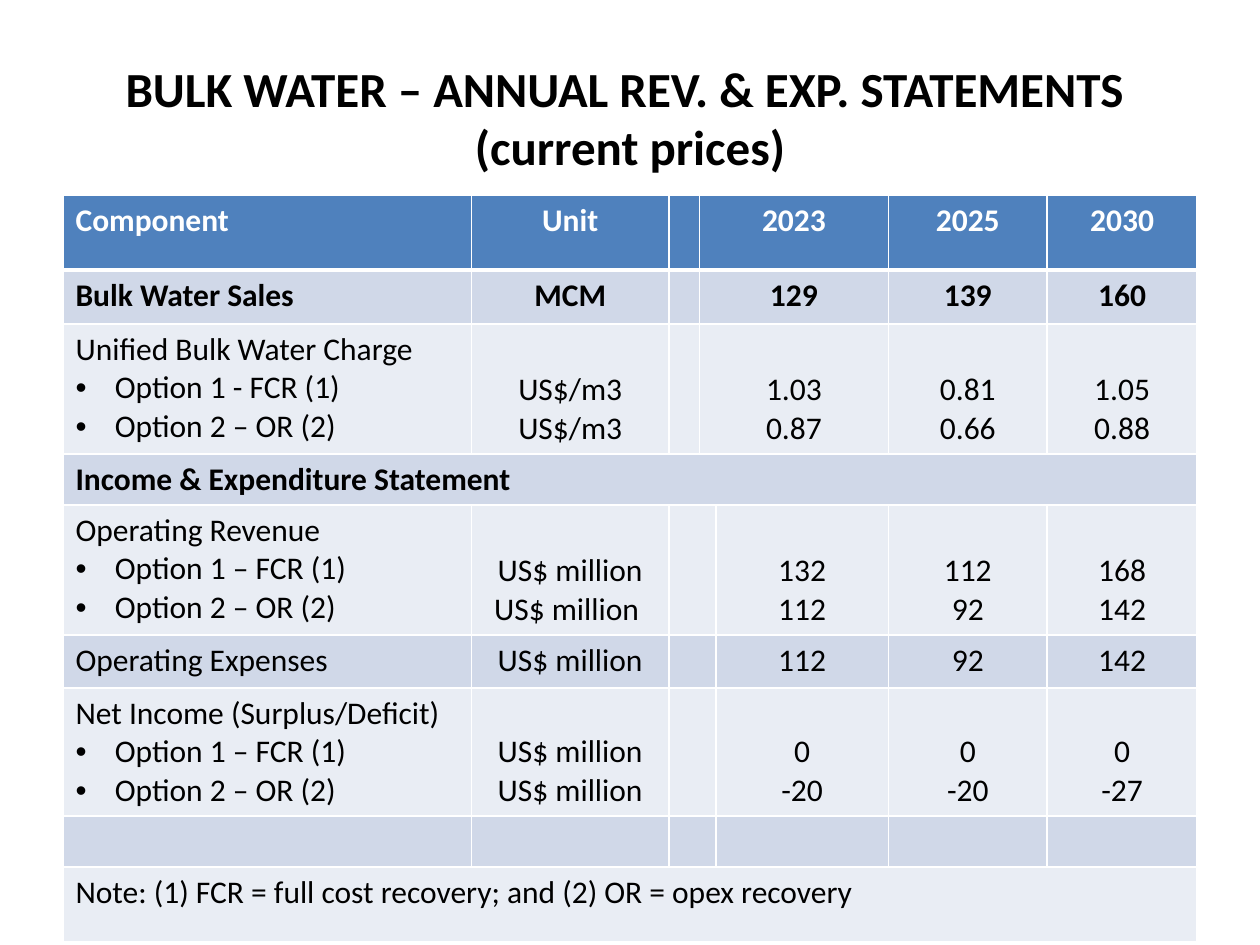
from copy import deepcopy
from lxml import etree
from pptx import Presentation
from pptx import util as u
from pptx.dml.color import RGBColor
from pptx.enum import text
from pptx.oxml.ns import qn

BLACK = RGBColor(0x00, 0x00, 0x00)
WHITE = RGBColor(0xFF, 0xFF, 0xFF)
HEADER_BLUE = RGBColor(0x4F, 0x81, 0xBD)
BAND_DARK = RGBColor(0xD0, 0xD8, 0xE8)
BAND_LIGHT = RGBColor(0xE9, 0xED, 0xF4)


def style_run(run, size, color, bold):
    run.font.name = "Calibri"
    run.font.size = u.Pt(size)
    run.font.color.rgb = color
    run.font.bold = bold


def add_borders(cell, bottom_width):
    props = cell._tc.get_or_add_tcPr()
    widths = {"lnL": 1, "lnR": 1, "lnT": 1, "lnB": bottom_width}
    for position, (side, width) in enumerate(widths.items()):
        line = etree.Element(qn("a:" + side), w=str(u.Pt(width)))
        fill = etree.SubElement(line, qn("a:solidFill"))
        etree.SubElement(fill, qn("a:srgbClr"), val=str(WHITE))
        props.insert(position, line)


prs = Presentation()
prs.slide_width, prs.slide_height = u.Cm(25.4), u.Cm(19.05)
slide = prs.slides.add_slide(prs.slide_layouts[5])

heading = slide.shapes.title
heading.left, heading.top = u.Cm(1.27), u.Cm(0.74)
heading.width, heading.height = u.Cm(22.86), u.Cm(3.23)
heading.text_frame.text = "BULK WATER – ANNUAL REV. & EXP. STATEMENTS \v(current prices)"
heading.text_frame.vertical_anchor = text.MSO_ANCHOR.MIDDLE
heading_line = heading.text_frame.paragraphs[0]
heading_line.alignment = text.PP_ALIGN.CENTER
for run in heading_line.runs:
    style_run(run, 28, BLACK, True)
for line_break in heading_line._p.findall(qn("a:br")):
    line_break.append(deepcopy(heading_line.runs[0]._r.rPr))

options = "\nOption 1 – FCR (1)\nOption 2 – OR (2)"
million = "US$ million"
statement = [
    (1.5, ["Component", "Unit", "2023", "2025", "2030"]),
    (1.09, ["Bulk Water Sales", "MCM", "129", "139", "160"]),
    (2.62, ["Unified Bulk Water Charge\nOption 1 - FCR (1)\nOption 2 – OR (2)",
            "US$/m3\nUS$/m3", "1.03\n0.87", "0.81\n0.66", "1.05\n0.88"]),
    (0.99, ["Income & Expenditure Statement"]),
    (2.62, ["Operating Revenue" + options, f"{million}\n{million} ",
            "132\n112", "112\n92", "168\n142"]),
    (1.07, ["Operating Expenses", million, "112", "92", "142"]),
    (2.57, ["Net Income (Surplus/Deficit)" + options, f"{million}\n{million}",
            "0\n-20", "0\n-20", "0\n-27"]),
    (1.02, ["", "", "", "", ""]),
    (1.5, ["Note: (1) FCR = full cost recovery; and (2) OR = opex recovery"]),
]
column_widths = [8.23, 3.99, 0.61, 0.33, 3.48, 3.2, 3.02]
bold_rows = {0, 1, 3}
first_income_row = 4

table = slide.shapes.add_table(
    len(statement), len(column_widths), u.Cm(1.27), u.Cm(3.94),
    u.Cm(sum(column_widths)), u.Cm(sum(height for height, _ in statement))).table
for column, width in zip(table.columns, column_widths):
    column.width = u.Cm(width)

for r, (height, entries) in enumerate(statement):
    table.rows[r].height = u.Cm(height)
    for cell in table.rows[r].cells:
        cell.fill.solid()
        cell.fill.fore_color.rgb = HEADER_BLUE if r == 0 else BAND_DARK if r % 2 else BAND_LIGHT
        add_borders(cell, 3 if r == 0 else 1)

    if len(entries) == 1:
        table.cell(r, 0).merge(table.cell(r, 6))
        positions = [0]
    elif r < first_income_row:
        table.cell(r, 3).merge(table.cell(r, 4))
        positions = [0, 1, 3, 5, 6]
    else:
        table.cell(r, 2).merge(table.cell(r, 3))
        positions = [0, 1, 4, 5, 6]

    for c, entry in zip(positions, entries):
        if not entry:
            continue
        cell = table.cell(r, c)
        cell.text_frame.text = entry
        if c and "\n" in entry:
            cell.vertical_anchor = text.MSO_ANCHOR.BOTTOM
        for i, paragraph in enumerate(cell.text_frame.paragraphs):
            paragraph.alignment = text.PP_ALIGN.CENTER if c else text.PP_ALIGN.LEFT
            for run in paragraph.runs:
                style_run(run, 18, BLACK if r else WHITE, r in bold_rows)
            if c == 0 and i:
                props = paragraph._p.get_or_add_pPr()
                props.set("marL", str(u.Cm(0.79)))
                props.set("indent", str(-u.Cm(0.79)))
                etree.SubElement(props, qn("a:buFont"), typeface="Arial")
                etree.SubElement(props, qn("a:buChar"), char="•")

prs.save("out.pptx")
